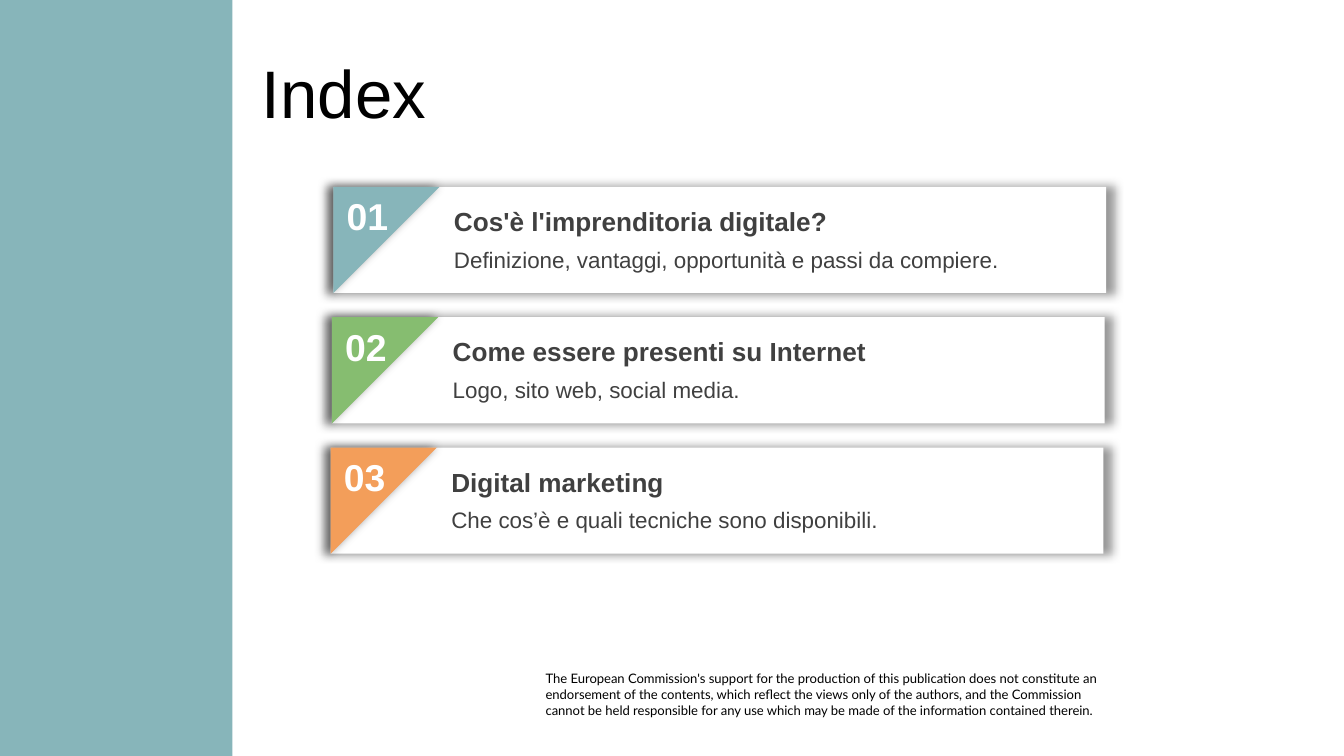
import pptx
import pptx.dml.color
import pptx.enum.shapes
import pptx.enum.text
import pptx.oxml
import pptx.oxml.ns
import pptx.util

Inches = pptx.util.Inches
RGBColor = pptx.dml.color.RGBColor
SHAPE = pptx.enum.shapes.MSO_SHAPE
ANCHOR = pptx.enum.text.MSO_ANCHOR

TEAL = RGBColor(0x87, 0xB5, 0xBA)
GREEN = RGBColor(0x86, 0xBD, 0x70)
ORANGE = RGBColor(0xF3, 0x9E, 0x5A)
WHITE = RGBColor(0xFF, 0xFF, 0xFF)
BLACK = RGBColor(0x00, 0x00, 0x00)
GREY = RGBColor(0x40, 0x40, 0x40)

SLIDE_WIDTH = 10
SLIDE_HEIGHT = SLIDE_WIDTH * 9 / 16
CARD_HEIGHT = 0.79
CARD_PITCH = 0.97
CARD_SHIFT = -0.01

TOPICS = [
    ("01", TEAL, "Cos'è l'imprenditoria digitale?",
     "Definizione, vantaggi, opportunità e passi da compiere."),
    ("02", GREEN, "Come essere presenti su Internet",
     "Logo, sito web, social media."),
    ("03", ORANGE, "Digital marketing",
     "Che cos’è e quali tecniche sono disponibili."),
]
DISCLAIMER = [
    "The European Commission's support for the production of this publication "
    "does not constitute an endorsement of the contents, which reflect the views "
    "only of the authors, and the Commission",
    "cannot be held responsible for any use which may be made of the information "
    "contained therein.",
]


def add_text(shapes, box, paragraphs, size, color=GREY, font="Arial", bold=False,
             anchor=ANCHOR.TOP, inset=True):
    """Add a wrapped text box with one format for all its paragraphs."""
    textbox = shapes.add_textbox(*map(Inches, box))
    frame = textbox.text_frame
    frame.word_wrap = True
    frame.vertical_anchor = anchor
    if not inset:
        frame.margin_left = frame.margin_right = 0
        frame.margin_top = frame.margin_bottom = 0
    frame.text = "\n".join(paragraphs)
    for paragraph in frame.paragraphs:
        paragraph.font.name = font
        paragraph.font.size = pptx.util.Pt(size)
        paragraph.font.bold = bold
        paragraph.font.color.rgb = color


def add_filled(shapes, preset, box, color):
    """Add a preset shape with a plain fill, no outline and no shadow."""
    shape = shapes.add_shape(preset, *map(Inches, box))
    shape.shadow.inherit = False
    shape.fill.solid()
    shape.fill.fore_color.rgb = color
    shape.line.fill.background()
    return shape


def add_glow_shadow(shape):
    """Give a shape a soft black shadow slightly larger than itself."""
    effects = shape.element.spPr.find(pptx.oxml.ns.qn("a:effectLst"))
    effects.append(pptx.oxml.parse_xml(
        f'<a:outerShdw {pptx.oxml.ns.nsdecls("a")} blurRad="{pptx.util.Pt(5)}" '
        'dist="0" dir="0" sx="102000" sy="102000" algn="ctr" rotWithShape="0">'
        '<a:srgbClr val="000000"><a:alpha val="40000"/></a:srgbClr></a:outerShdw>'))


def add_topic_card(slide, box, number, color, heading, summary):
    """Add a numbered card with its corner triangle, heading and summary."""
    left, top, width, height = box
    card = slide.shapes.add_group_shape()
    panel = add_filled(card.shapes, SHAPE.RECTANGLE, box, WHITE)
    corner = add_filled(card.shapes, SHAPE.RIGHT_TRIANGLE,
                        (left, top, height, height), color)
    corner.rotation = 90
    for part in (panel, corner):
        add_glow_shadow(part)
    add_text(slide.shapes, (left, top, 0.58, 0.44), [number], 20, WHITE, bold=True)
    wording = slide.shapes.add_group_shape()
    text_left = left + height + 0.01
    add_text(wording.shapes, (text_left, top + 0.09, 4.8, 0.57), [heading], 14, bold=True)
    add_text(wording.shapes, (text_left, top + 0.39, 4.8, 0.5), [summary], 12)


def add_topics(slide, left, top, width):
    """Stack the topic cards at an equal pitch."""
    for index, topic in enumerate(TOPICS):
        box = (left + index * CARD_SHIFT, top + index * CARD_PITCH, width, CARD_HEIGHT)
        add_topic_card(slide, box, *topic)


def add_index_slide(presentation):
    """Add the index slide with side band, title, topics and disclaimer."""
    slide = presentation.slides.add_slide(presentation.slide_layouts[6])
    add_text(slide.shapes, (4.06, 4.99, 4.17, 0.35), DISCLAIMER, 7, BLACK,
             font="Lato", inset=False)
    add_filled(slide.shapes, SHAPE.RECTANGLE, (0, 0, 1.73, SLIDE_HEIGHT), TEAL)
    add_text(slide.shapes, (1.85, 0.37, 7.2, 0.63), ["Index"], 36, BLACK,
             anchor=ANCHOR.MIDDLE)
    add_topics(slide, 2.48, 1.39, 5.75)


def main():
    """Build the presentation and save it."""
    presentation = pptx.Presentation()
    presentation.slide_width = Inches(SLIDE_WIDTH)
    presentation.slide_height = Inches(SLIDE_HEIGHT)
    add_index_slide(presentation)
    presentation.save("out.pptx")


if __name__ == "__main__":
    main()
